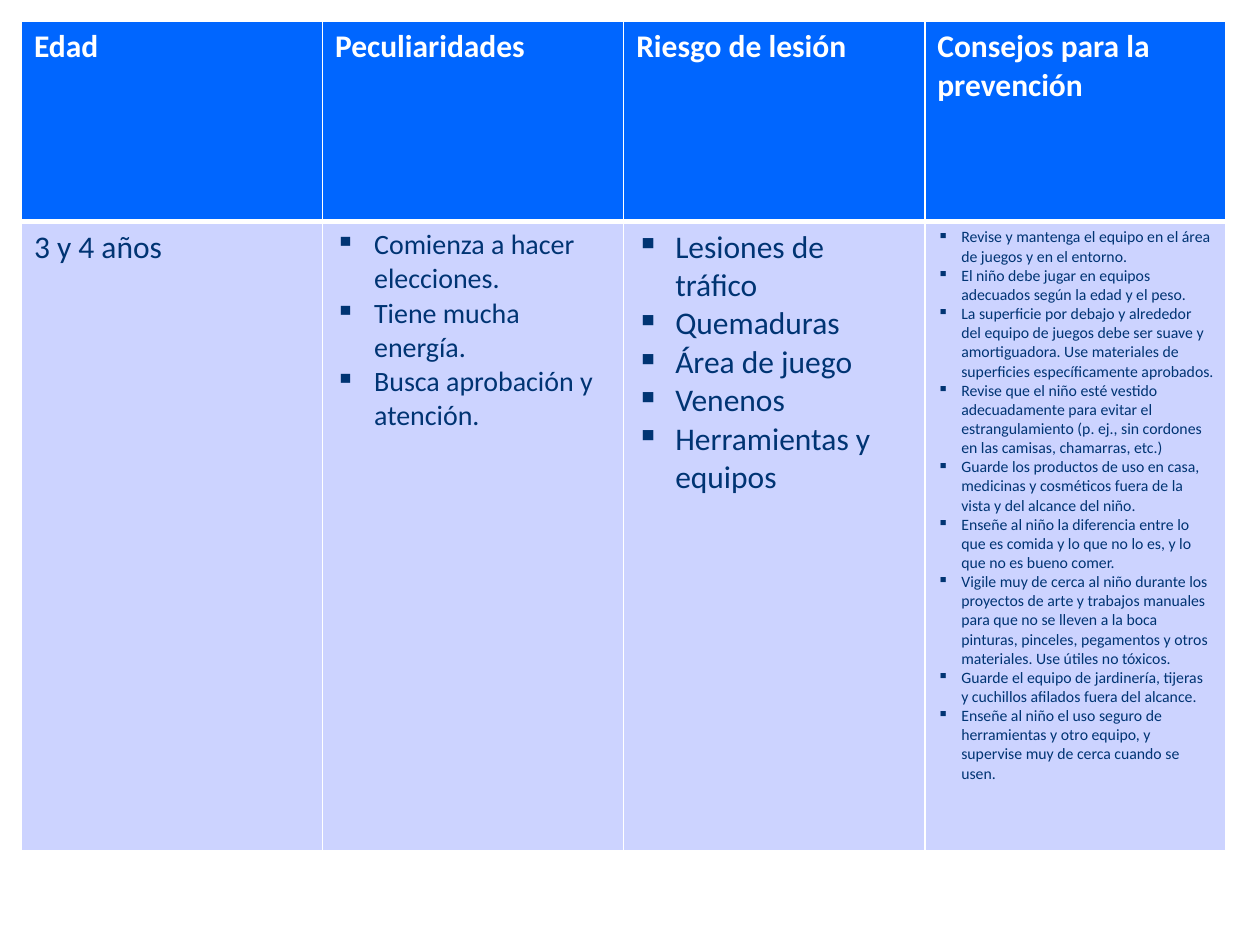
from dataclasses import dataclass

from lxml import etree
from pptx import Presentation
from pptx.dml.color import RGBColor
from pptx.oxml.ns import qn
from pptx.table import _Cell
from pptx.util import Inches, Pt

WHITE = RGBColor(0xFF, 0xFF, 0xFF)
BLUE = RGBColor(0x00, 0x66, 0xFF)
LAVENDER = RGBColor(0xCC, 0xD3, 0xFF)
NAVY = RGBColor(0x00, 0x34, 0x73)

FONT = "Calibri"
BULLET = "▪"
COLUMN_WIDTH = 2.39
HEADER_HEIGHT = 1.59
BODY_HEIGHT = 4.99
THIN, THICK = 1, 3


@dataclass(frozen=True)
class Column:
    heading: str
    items: tuple[str, ...]
    size: int = 18
    indent: float = 0  # bullet indent in inches; 0 means no bullets


COLUMNS = (
    Column("Edad", ("3 y 4 años",)),
    Column(
        "Peculiaridades",
        (
            "Comienza a hacer elecciones.",
            "Tiene mucha energía.",
            "Busca aprobación y atención.",
        ),
        size=16,
        indent=0.31,
    ),
    Column(
        "Riesgo de lesión",
        (
            "Lesiones de tráfico",
            "Quemaduras",
            "Área de juego",
            "Venenos",
            "Herramientas y equipos",
        ),
        indent=0.31,
    ),
    Column(
        "Consejos para la prevención",
        (
            "Revise y mantenga el equipo en el área de juegos y en el entorno.",
            "El niño debe jugar en equipos adecuados según la edad y el peso.",
            "La superficie por debajo y alrededor del equipo de juegos debe ser suave y "
            "amortiguadora. Use materiales de superficies específicamente aprobados.",
            "Revise que el niño esté vestido adecuadamente para evitar el estrangulamiento "
            "(p. ej., sin cordones en las camisas, chamarras, etc.)",
            "Guarde los productos de uso en casa, medicinas y cosméticos fuera de la vista "
            "y del alcance del niño.",
            "Enseñe al niño la diferencia entre lo que es comida y lo que no lo es, "
            "y lo que no es bueno comer.",
            "Vigile muy de cerca al niño durante los proyectos de arte y trabajos manuales "
            "para que no se lleven a la boca pinturas, pinceles, pegamentos y otros "
            "materiales. Use útiles no tóxicos.",
            "Guarde el equipo de jardinería, tijeras y cuchillos afilados fuera del alcance.",
            "Enseñe al niño el uso seguro de herramientas y otro equipo, y supervise muy de "
            "cerca cuando se usen.",
        ),
        size=9,
        indent=0.19,
    ),
)


def set_borders(cell: _Cell, top: int, bottom: int) -> None:
    """Draw white cell borders; the widths are in points."""
    properties = cell._tc.get_or_add_tcPr()
    for side, width in (("L", THIN), ("R", THIN), ("T", top), ("B", bottom)):
        line = etree.SubElement(properties, qn(f"a:ln{side}"), w=str(Pt(width)))
        fill = etree.SubElement(line, qn("a:solidFill"))
        etree.SubElement(fill, qn("a:srgbClr"), val=str(WHITE))


def write_items(
    cell: _Cell, items: tuple[str, ...], size: int, color: RGBColor, bold: bool, indent: float = 0
) -> None:
    frame = cell.text_frame
    for index, item in enumerate(items):
        para = frame.add_paragraph() if index else frame.paragraphs[0]
        para.text = item
        if indent:
            properties = para._p.get_or_add_pPr()
            properties.set("marL", str(Inches(indent)))
            properties.set("indent", str(-Inches(indent)))
            etree.SubElement(properties, qn("a:buChar"), char=BULLET)
        font = para.font
        font.name = FONT
        font.size = Pt(size)
        font.bold = bold
        font.color.rgb = color


def fill_cell(cell: _Cell, color: RGBColor) -> None:
    cell.fill.solid()
    cell.fill.fore_color.rgb = color


def main() -> None:
    deck = Presentation()
    deck.slide_width, deck.slide_height = Inches(10), Inches(7.5)
    page = deck.slides.add_slide(deck.slide_layouts[6])

    table = page.shapes.add_table(
        2,
        len(COLUMNS),
        Inches(0.17),
        Inches(0.17),
        Inches(COLUMN_WIDTH * len(COLUMNS)),
        Inches(HEADER_HEIGHT + BODY_HEIGHT),
    ).table
    table.horz_banding = False
    table.rows[0].height = Inches(HEADER_HEIGHT)
    table.rows[1].height = Inches(BODY_HEIGHT)

    for index, column in enumerate(COLUMNS):
        table.columns[index].width = Inches(COLUMN_WIDTH)
        header, body = table.cell(0, index), table.cell(1, index)

        set_borders(header, top=THIN, bottom=THICK)
        fill_cell(header, BLUE)
        write_items(header, (column.heading,), 18, WHITE, bold=True)

        set_borders(body, top=THICK, bottom=THIN)
        fill_cell(body, LAVENDER)
        write_items(body, column.items, column.size, NAVY, bold=False, indent=column.indent)

    deck.save("out.pptx")


if __name__ == "__main__":
    main()
